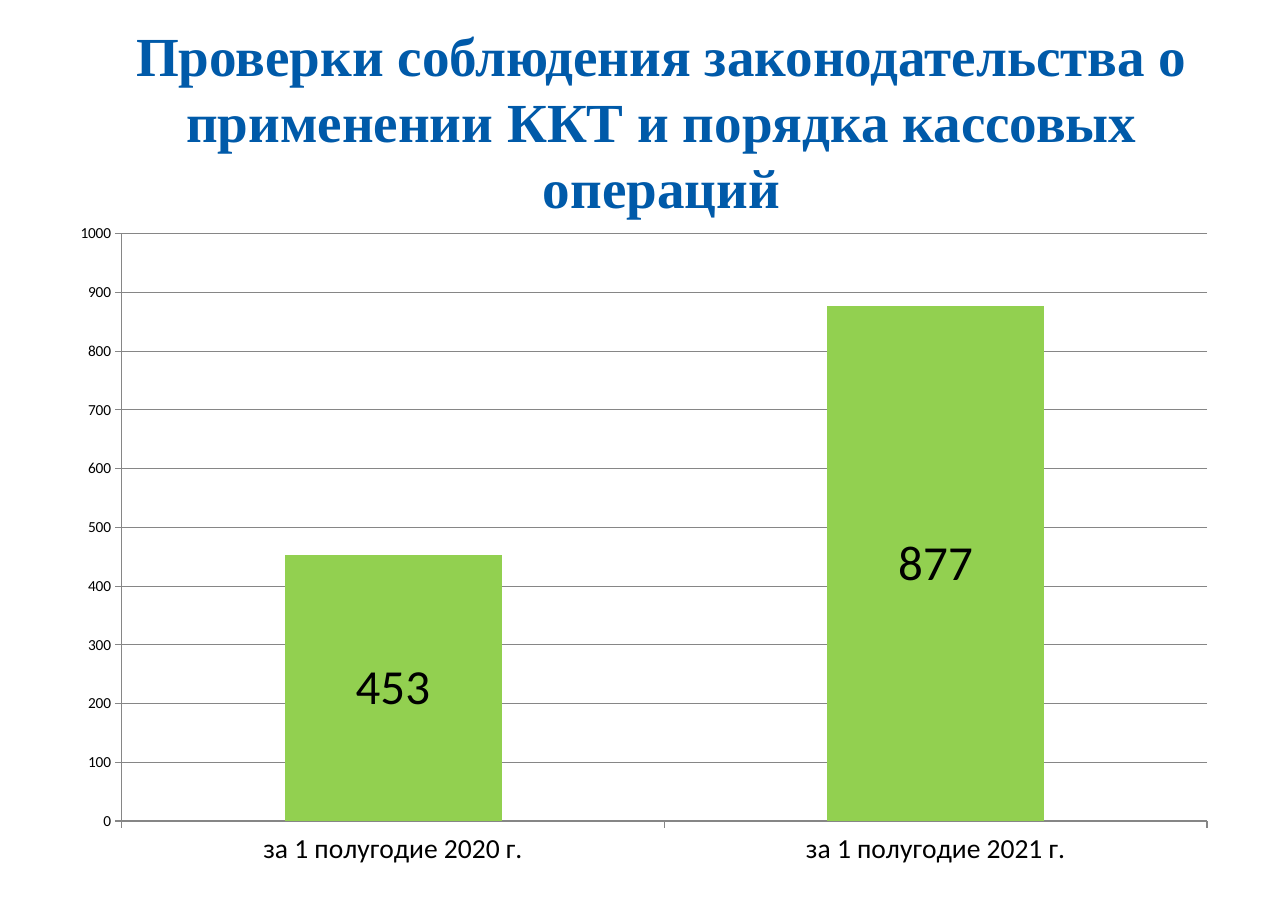
from dataclasses import dataclass

from lxml import etree
from pptx import Presentation
from pptx.chart import axis as axes, chart as charts, data as chart_data
from pptx.dml import color
from pptx.enum import chart as chart_enum, text
from pptx.oxml import ns
from pptx.util import Pt


@dataclass(frozen=True)
class Theme:
    title_color: str = "005AA9"
    bar_color: str = "92D050"
    line_color: str = "868686"
    text_color: str = "000000"
    title_font: str = "Times New Roman"
    chart_font: str = "Calibri"
    title_size: int = 36
    value_size: int = 32
    category_size: int = 18
    scale_size: int = 10


@dataclass(frozen=True)
class HalfYear:
    label: str
    inspections: int


THEME = Theme()
HALF_YEARS = [
    HalfYear("за 1 полугодие 2020 г.", 453),
    HalfYear("за 1 полугодие 2021 г.", 877),
]
PLOT_AREA = {"x": 0.05, "y": 0.03, "w": 0.92, "h": 0.88}


def style_font(font, *, name: str, size: int, rgb: str, bold: bool = False) -> None:
    font.name, font.size, font.bold = name, Pt(size), bold
    font.color.rgb = color.RGBColor.from_string(rgb)


def write_text(box, content: str, **font_format) -> None:
    frame = box.text_frame
    frame.word_wrap = True
    frame.auto_size = text.MSO_AUTO_SIZE.NONE
    frame.vertical_anchor = text.MSO_ANCHOR.MIDDLE
    frame.margin_left = frame.margin_right = Pt(8)
    frame.margin_top = frame.margin_bottom = Pt(4)
    para = frame.paragraphs[0]
    para.alignment = text.PP_ALIGN.CENTER
    span = para.add_run()
    span.text = content
    style_font(span.font, **font_format)


def style_line(line) -> None:
    line.color.rgb = color.RGBColor.from_string(THEME.line_color)
    line.width = Pt(0.75)


def style_axis(axis: axes._BaseAxis, size: int, grid: bool) -> None:
    axis.has_major_gridlines = grid
    axis.major_tick_mark = chart_enum.XL_TICK_MARK.OUTSIDE
    axis.minor_tick_mark = chart_enum.XL_TICK_MARK.NONE
    style_line(axis.format.line)
    if grid:
        style_line(axis.major_gridlines.format.line)
    style_font(axis.tick_labels.font, name=THEME.chart_font, size=size, rgb=THEME.text_color)


def place_plot(chart: charts.Chart) -> None:
    """Fix the inner plot area as fractions of the chart frame."""
    plot_area = chart._chartSpace.find(".//" + ns.qn("c:plotArea"))
    for old in plot_area.findall(ns.qn("c:layout")):
        plot_area.remove(old)
    layout = etree.Element(ns.qn("c:layout"))
    manual = etree.SubElement(layout, ns.qn("c:manualLayout"))
    settings = {"layoutTarget": "inner", "xMode": "edge", "yMode": "edge", **PLOT_AREA}
    for tag, value in settings.items():
        etree.SubElement(manual, ns.qn(f"c:{tag}")).set("val", str(value))
    plot_area.insert(0, layout)


# Page
deck = Presentation()
deck.slide_width, deck.slide_height = Pt(841.68), Pt(595.44)
page = deck.slides.add_slide(deck.slide_layouts.get_by_name("Title Only"))

# Title
title = page.shapes.title
title.left, title.top, title.width, title.height = Pt(52.5), Pt(31), Pt(759.5), Pt(96)
write_text(
    title,
    "Проверки соблюдения законодательства о применении ККТ и порядка кассовых операций",
    name=THEME.title_font, size=THEME.title_size, rgb=THEME.title_color, bold=True,
)

# Chart of inspections
counts = chart_data.CategoryChartData()
counts.categories = [half.label for half in HALF_YEARS]
counts.add_series("Series 1", [half.inspections for half in HALF_YEARS])
chart = page.shapes.add_chart(
    chart_enum.XL_CHART_TYPE.COLUMN_STACKED, Pt(41), Pt(139.7), Pt(771), Pt(436.3), counts
).chart
chart.has_legend = False
chart.has_title = False
style_font(chart.font, name=THEME.chart_font, size=THEME.scale_size, rgb=THEME.text_color)
place_plot(chart)

# Axes
style_axis(chart.category_axis, THEME.category_size, grid=False)
style_axis(chart.value_axis, THEME.scale_size, grid=True)
chart.value_axis.minimum_scale = 0
chart.value_axis.maximum_scale = 1000
chart.value_axis.major_unit = 100

# Bars and their values
plot = chart.plots[0]
plot.gap_width, plot.overlap, plot.vary_by_categories = 150, 100, False
fill = plot.series[0].format.fill
fill.solid()
fill.fore_color.rgb = color.RGBColor.from_string(THEME.bar_color)
plot.has_data_labels = True
labels = plot.data_labels
labels.show_value = True
labels.position = chart_enum.XL_LABEL_POSITION.CENTER
style_font(labels.font, name=THEME.chart_font, size=THEME.value_size, rgb=THEME.text_color)

deck.save("out.pptx")
